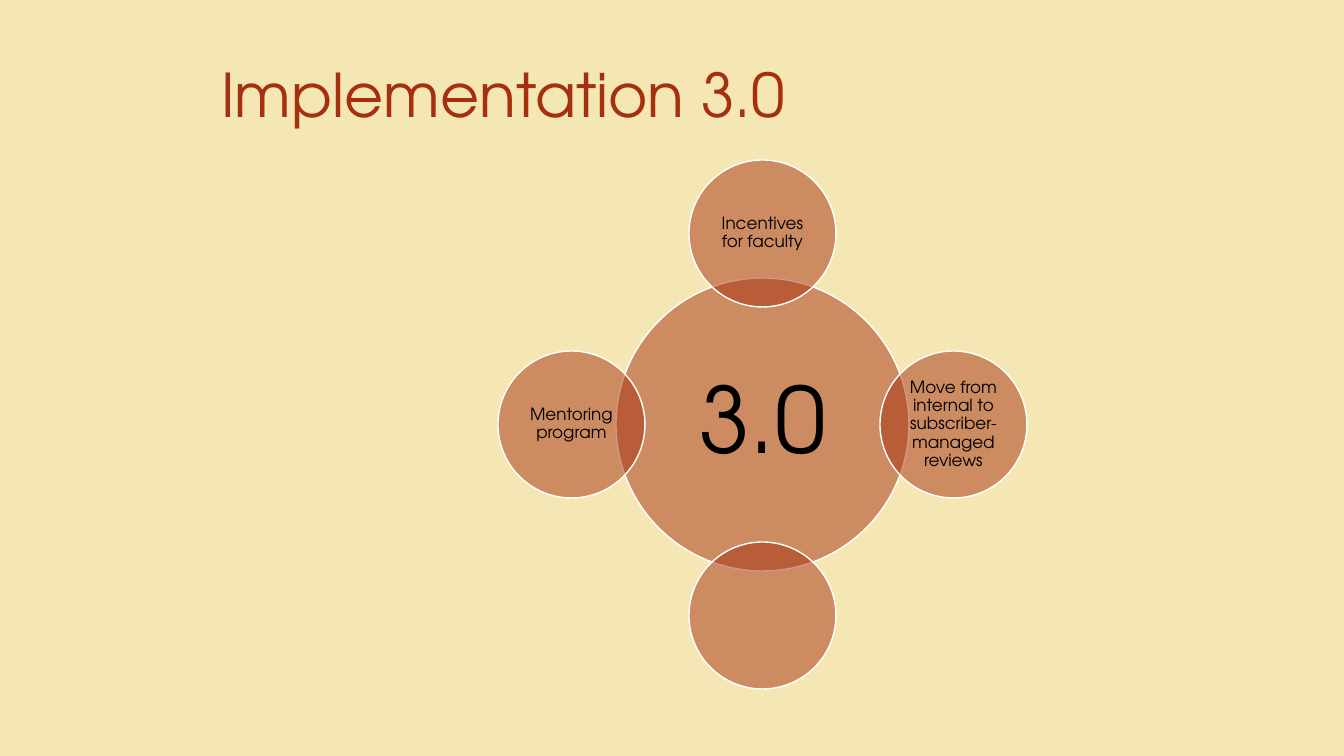
from dataclasses import dataclass

from lxml import etree
from pptx import Presentation
from pptx.dml.color import RGBColor
from pptx.enum.shapes import MSO_SHAPE
from pptx.enum.text import MSO_ANCHOR, MSO_AUTO_SIZE, PP_ALIGN
from pptx.oxml.ns import qn
from pptx.util import Pt

ELLIPSE = MSO_SHAPE.OVAL
MIDDLE = MSO_ANCHOR.MIDDLE
NO_AUTOFIT = MSO_AUTO_SIZE.NONE
LEFT, CENTER = PP_ALIGN.LEFT, PP_ALIGN.CENTER
TITLE_ONLY = 5
EMU_PER_PX = 914400 / 100.8


@dataclass(frozen=True)
class Theme:
    font: str = "TeX Gyre Adventor"
    background: RGBColor = RGBColor(0xF5, 0xE7, 0xB4)
    accent: RGBColor = RGBColor(0xA5, 0x30, 0x0F)
    outline: RGBColor = RGBColor(0xFF, 0xFF, 0xFF)
    ink: RGBColor = RGBColor(0, 0, 0)
    circle_opacity: int = 50
    title_size: int = 43
    hub_size: int = 65
    satellite_size: int = 12


THEME = Theme()


def px(length):
    return round(length * EMU_PER_PX)


def write_text(frame, text, size, color, align, inset):
    frame.word_wrap = True
    frame.auto_size = NO_AUTOFIT
    frame.vertical_anchor = MIDDLE
    frame.margin_left = frame.margin_right = px(inset)
    frame.margin_top = frame.margin_bottom = px(inset)
    paragraph = frame.paragraphs[0]
    paragraph.alignment = align
    run = paragraph.add_run()
    run.text = text
    run.font.name = THEME.font
    run.font.size = Pt(size)
    run.font.color.rgb = color
    return paragraph


def place_title(slide, box, text):
    title = slide.shapes.title
    title.left, title.top, title.width, title.height = map(px, box)
    write_text(title.text_frame, text, THEME.title_size, THEME.accent, LEFT, 10)


def add_circle(shapes, center_x, center_y, diameter, label, size, inset):
    radius = diameter / 2
    circle = shapes.add_shape(
        ELLIPSE, px(center_x - radius), px(center_y - radius), px(diameter), px(diameter))
    circle.shadow.inherit = False
    circle.fill.solid()
    circle.fill.fore_color.rgb = THEME.accent
    color = circle.fill._xPr.find(qn("a:solidFill"))[0]
    etree.SubElement(color, qn("a:alpha"), val=str(THEME.circle_opacity * 1000))
    circle.line.color.rgb = THEME.outline
    circle.line.width = Pt(1)
    if label:
        paragraph = write_text(circle.text_frame, label, size, THEME.ink, CENTER, inset)
        paragraph.line_spacing = 0.9


def place_radial_diagram(slide, box, hub_label, satellite_labels):
    left, top, width, height = box
    center_x, center_y = left + width / 2, top + height / 2
    satellite_diameter = 147
    hub_diameter = 2 * satellite_diameter - 1
    orbit = (width - satellite_diameter) / 2
    diagram = slide.shapes.add_group_shape()
    add_circle(diagram.shapes, center_x, center_y, hub_diameter, hub_label, THEME.hub_size, 9)
    directions = [(0, -1), (1, 0), (0, 1), (-1, 0)]
    for (step_x, step_y), label in zip(directions, satellite_labels):
        add_circle(diagram.shapes, center_x + step_x * orbit, center_y + step_y * orbit,
                   satellite_diameter, label, THEME.satellite_size, 2)


def main():
    deck = Presentation()
    deck.slide_width, deck.slide_height = px(1344), px(756)
    slide = deck.slides.add_slide(deck.slide_layouts[TITLE_ONLY])
    slide.background.fill.solid()
    slide.background.fill.fore_color.rgb = THEME.background
    place_title(slide, (211, 30, 1102, 126), "Implementation 3.0")
    place_radial_diagram(slide, (498, 160, 529, 529), "3.0", [
        "Incentives for faculty",
        "Move from internal to subscriber-managed reviews",
        "",
        "Mentoring program",
    ])
    deck.save("out.pptx")


if __name__ == "__main__":
    main()
